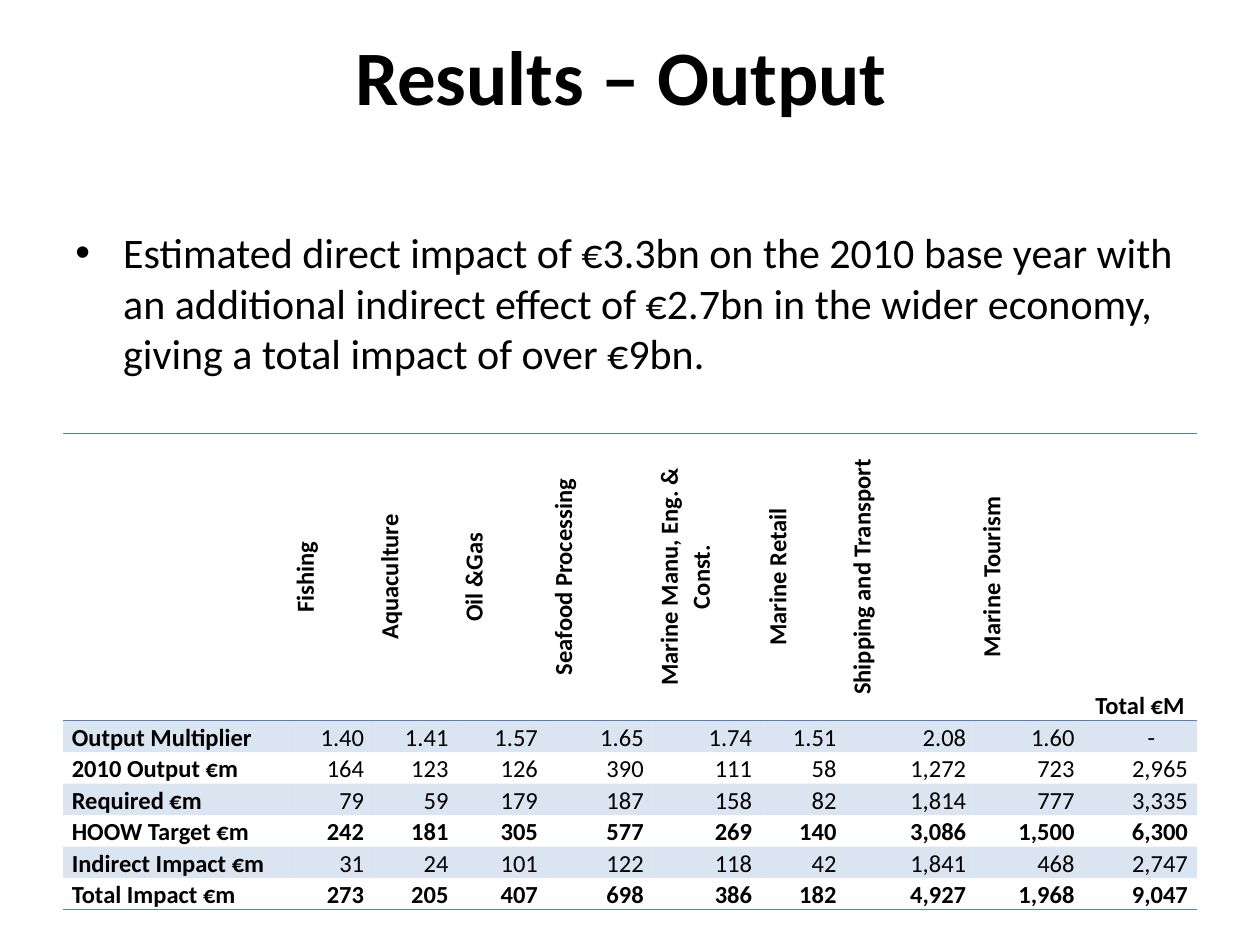
from dataclasses import dataclass

from lxml import etree
from pptx import Presentation
from pptx import util as u
from pptx.dml.color import RGBColor
from pptx.enum import text
from pptx.oxml.ns import qn

NO_STYLE_NO_GRID = "{2D5ABB26-0587-4C30-8999-92F81FD0307C}"
ALIGN = text.PP_ALIGN


@dataclass(frozen=True)
class Theme:
    font: str = "Calibri"
    ink: str = "000000"
    accent: str = "4F81BD"
    band_alpha: int = 20000  # thousandths of a percent
    title_size: int = 44
    body_size: int = 24
    table_size: int = 14


class SlideBuilder:
    def __init__(self, slide, theme):
        self.slide = slide
        self.theme = theme

    def add_run(self, paragraph, words, size, bold=False):
        run = paragraph.add_run()
        run.text = words
        run.font.name = self.theme.font
        run.font.size = u.Pt(size)
        run.font.bold = bold
        run.font.color.rgb = RGBColor.from_string(self.theme.ink)

    def text_frame(self, left, top, width, height, anchor):
        box = self.slide.shapes.add_textbox(*map(u.Inches, (left, top, width, height)))
        box.text_frame.word_wrap = True
        box.text_frame.vertical_anchor = anchor
        return box.text_frame

    def title(self, words, *place):
        heading = self.text_frame(*place, text.MSO_ANCHOR.MIDDLE).paragraphs[0]
        heading.alignment = ALIGN.CENTER
        self.add_run(heading, words, self.theme.title_size, bold=True)

    def bullet(self, words, *place):
        point = self.text_frame(*place, text.MSO_ANCHOR.TOP).paragraphs[0]
        props = point._p.get_or_add_pPr()
        props.set("marL", str(u.Inches(0.38)))
        props.set("indent", str(u.Inches(-0.38)))
        etree.SubElement(props, qn("a:buFont"), typeface="Arial")
        etree.SubElement(props, qn("a:buChar"), char="•")
        self.add_run(point, words, self.theme.body_size)

    def table(self, left, top, widths, heights):
        frame = self.slide.shapes.add_table(
            len(heights), len(widths), u.Inches(left), u.Inches(top),
            u.Inches(sum(widths)), u.Inches(sum(heights)))
        grid = frame.table
        grid.first_row = grid.horz_banding = False
        grid._tbl.tblPr.find(qn("a:tableStyleId")).text = NO_STYLE_NO_GRID
        for column, width in zip(grid.columns, widths):
            column.width = u.Inches(width)
        for row, height in zip(grid.rows, heights):
            row.height = u.Inches(height)
        return grid

    def cell(self, cell, words, align, bold=False, vertical=False,
             banded=False, rules=(), indent=0):
        cell.margin_left = cell.margin_right = u.Inches(0.07)
        cell.margin_top = cell.margin_bottom = 0
        cell.vertical_anchor = text.MSO_ANCHOR.BOTTOM
        props = cell._tc.get_or_add_tcPr()
        if vertical:
            props.set("vert", "vert270")
        # Borders come before the fill in the cell properties
        for side in rules:
            line = etree.SubElement(props, qn(f"a:{side}"), w=str(u.Pt(1)))
            solid = etree.SubElement(line, qn("a:solidFill"))
            etree.SubElement(solid, qn("a:srgbClr"), val=self.theme.accent)
        if banded:
            cell.fill.solid()
            cell.fill.fore_color.rgb = RGBColor.from_string(self.theme.accent)
            tint = props.find(qn("a:solidFill")).find(qn("a:srgbClr"))
            etree.SubElement(tint, qn("a:alpha"), val=str(self.theme.band_alpha))
        else:
            cell.fill.background()
        paragraph = cell.text_frame.paragraphs[0]
        paragraph.alignment = align
        paragraph.line_spacing = 1.07
        paragraph.space_after = u.Pt(8)
        if indent:
            paragraph._p.get_or_add_pPr().set("marL", str(u.Inches(indent)))
        if words:
            self.add_run(paragraph, words, self.theme.table_size, bold)


SECTORS = ["", "Fishing", "Aquaculture", "Oil &Gas", "Seafood Processing",
           "Marine Manu, Eng. & Const.", "Marine Retail", "Shipping and Transport",
           "Marine Tourism", "Total €M"]
RESULTS = [
    ("Output Multiplier", "1.40 1.41 1.57 1.65 1.74 1.51 2.08 1.60 -"),
    ("2010 Output €m", "164 123 126 390 111 58 1,272 723 2,965"),
    ("Required €m", "79 59 179 187 158 82 1,814 777 3,335"),
    ("HOOW Target €m", "242 181 305 577 269 140 3,086 1,500 6,300"),
    ("Indirect Impact €m", "31 24 101 122 118 42 1,841 468 2,747"),
    ("Total Impact €m", "273 205 407 698 386 182 4,927 1,968 9,047"),
]
BOLD_ROWS = {"HOOW Target €m", "Total Impact €m"}
COLUMN_WIDTHS = [1.79, 0.67, 0.67, 0.71, 0.84, 0.86, 0.67, 1.03, 0.86, 0.9]


def main():
    deck = Presentation()
    deck.slide_width, deck.slide_height = u.Inches(10), u.Inches(7.5)
    builder = SlideBuilder(deck.slides.add_slide(deck.slide_layouts[6]), Theme())

    # Title and key finding
    builder.title("Results – Output ", 0.5, -0.03, 9, 1.25)
    builder.bullet(
        "Estimated direct impact of €3.3bn on the 2010 base year with an additional "
        "indirect effect of €2.7bn in the wider economy, giving a total impact of "
        "over €9bn.", 0.5, 1.75, 9, 4.95)

    # Table header: sector names read upwards, the total reads across
    output = builder.table(0.5, 3.44, COLUMN_WIDTHS, [1.05] + [0.21] * len(RESULTS))
    for col, sector in enumerate(SECTORS):
        builder.cell(output.cell(0, col), sector, ALIGN.CENTER, bold=True,
                     vertical=0 < col < len(SECTORS) - 1, rules=("lnT", "lnB"))

    # Table body: every other row is tinted, the last one is ruled off
    for row, (label, figures) in enumerate(RESULTS, start=1):
        look = {"banded": row % 2 == 1,
                "rules": ("lnB",) if row == len(RESULTS) else ()}
        builder.cell(output.cell(row, 0), label, ALIGN.LEFT, bold=True, **look)
        for col, figure in enumerate(figures.split(), start=1):
            missing = figure == "-"
            builder.cell(output.cell(row, col), figure,
                         ALIGN.LEFT if missing else ALIGN.RIGHT,
                         bold=label in BOLD_ROWS,
                         indent=0.44 if missing else 0, **look)

    deck.save("out.pptx")


if __name__ == "__main__":
    main()
